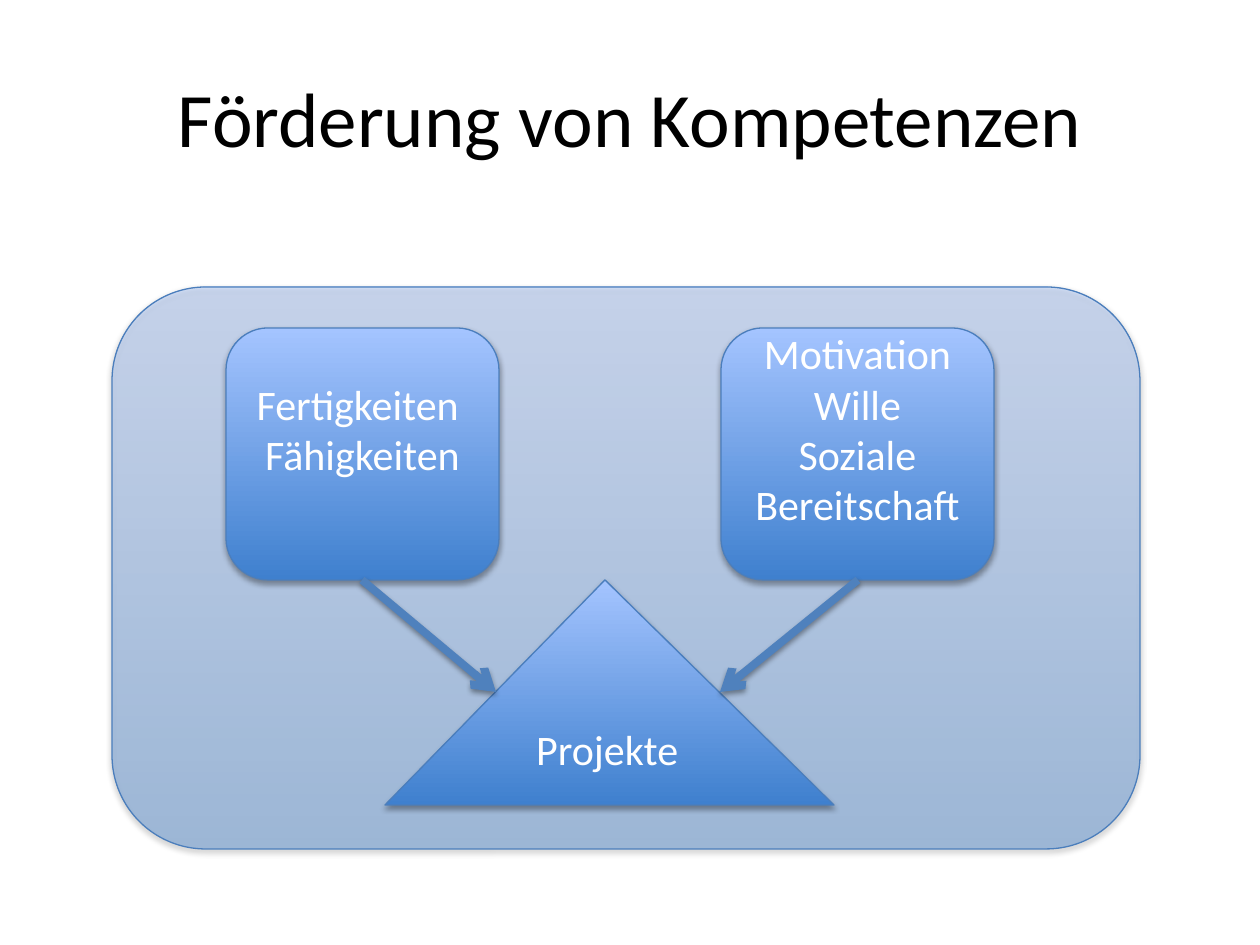
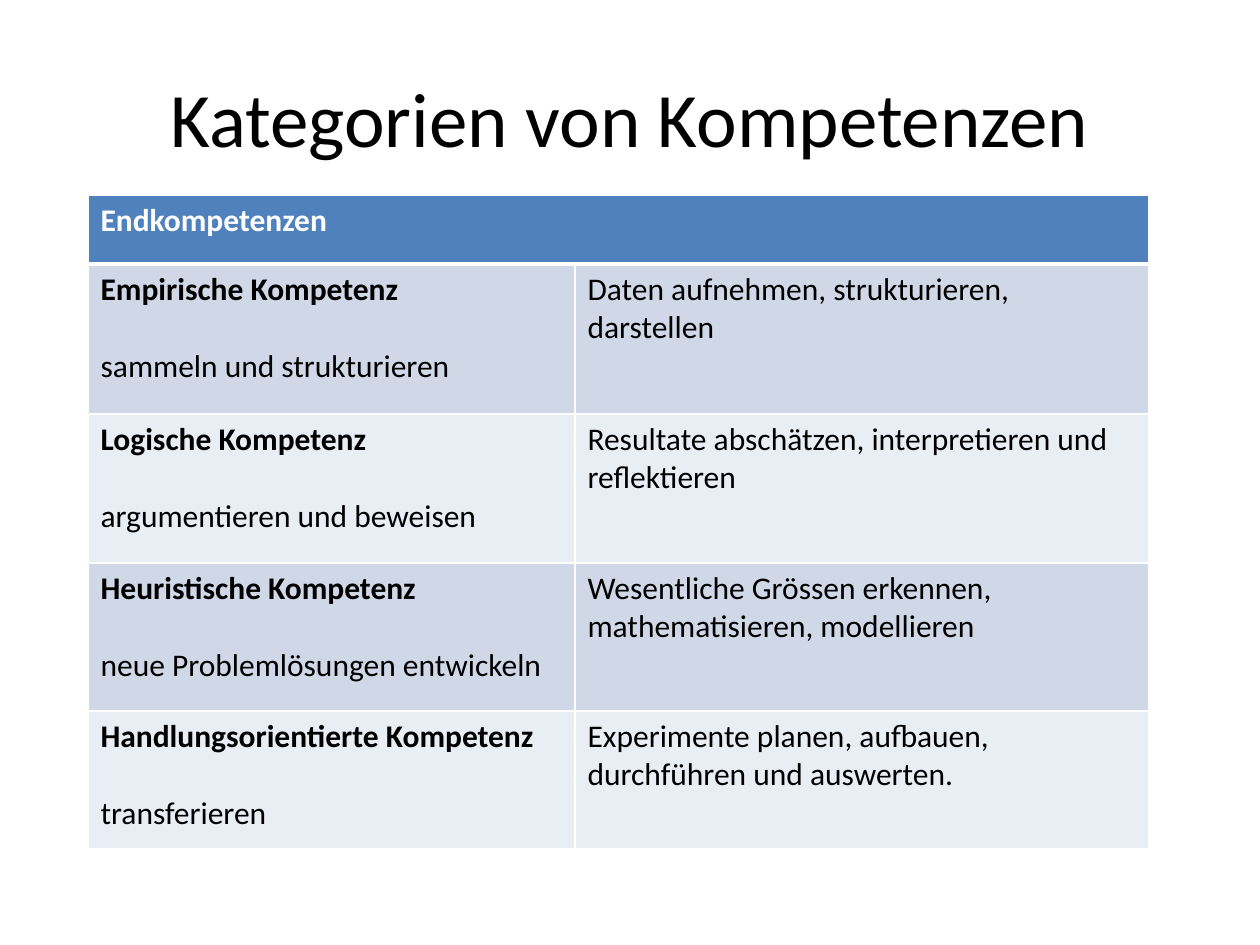
import pptx
import pptx.util
import pptx.dml.color
import pptx.enum.shapes
import pptx.enum.text
import pptx.oxml.ns
from lxml import etree

PX = 914400 // 126  # EMU in one px
FONT = "Calibri"
BLACK, WHITE = "000000", "FFFFFF"
ACCENT, OUTLINE = "4F81BD", "4B7EBC"
GRADIENT = ["3F80CE", "A4C4FF"]  # bottom, top
BANDS = ["D0D8E8", "E9EDF4"]

Pt = pptx.util.Pt
qn = pptx.oxml.ns.qn
MSO_SHAPE = pptx.enum.shapes.MSO_SHAPE
CENTER = pptx.enum.text.PP_ALIGN.CENTER
MIDDLE = pptx.enum.text.MSO_ANCHOR.MIDDLE


def rgb(color):
    return pptx.dml.color.RGBColor.from_string(color)


def add_shadow(s, alpha, dist):
    effects = etree.SubElement(s._element.spPr, qn("a:effectLst"))
    shadow = etree.SubElement(effects, qn("a:outerShdw"), blurRad="40000",
                              dist=str(dist), dir="5400000", rotWithShape="0")
    color = etree.SubElement(shadow, qn("a:srgbClr"), val=BLACK)
    etree.SubElement(color, qn("a:alpha"), val=str(alpha * 1000))


prs = pptx.Presentation()
prs.slide_width = 1260 * PX
prs.slide_height = 945 * PX

# Slides with their titles
slides = []
for title in ["Förderung von Kompetenzen", "Kategorien von Kompetenzen"]:
    s = prs.slides.add_slide(prs.slide_layouts[6])
    slides.append(s)
    tf = s.shapes.add_textbox(63 * PX, 38 * PX, 1134 * PX, 157 * PX).text_frame
    tf.word_wrap = True
    tf.vertical_anchor = MIDDLE
    p = tf.paragraphs[0]
    p.text = title
    p.alignment = CENTER
    p.font.name = FONT
    p.font.size = Pt(44)
    p.font.color.rgb = rgb(BLACK)

# Slide 1: panel, two boxes and the triangle
# kind, left, top, width, height, opacity in %, space under the text, lines
ROUND, TRIANGLE = MSO_SHAPE.ROUNDED_RECTANGLE, MSO_SHAPE.ISOSCELES_TRIANGLE
figures = [
    (ROUND, 112, 287, 1028, 562, 40, 6, []),
    (ROUND, 226, 328, 273, 252, 100, 57, ["Fertigkeiten ", "Fähigkeiten"]),
    (ROUND, 721, 328, 273, 252, 100, 57,
     ["Motivation", "Wille", "Soziale Bereitschaft"]),
    (TRIANGLE, 385, 580, 449, 225, 100, 6, ["Projekte"]),
]
shapes = slides[0].shapes
for kind, left, top, width, height, opacity, below, lines in figures:
    sp = shapes.add_shape(kind, left * PX, top * PX, width * PX, height * PX)
    if kind == TRIANGLE:
        sp.adjustments[0] = 0.49
    sp.fill.gradient()
    sp.fill.gradient_angle = 90
    for stop, color in zip(sp.fill.gradient_stops, GRADIENT):
        stop.color.rgb = rgb(color)
    if opacity < 100:
        for color in sp._element.spPr.iter(qn("a:srgbClr")):
            etree.SubElement(color, qn("a:alpha"), val=str(opacity * 1000))
    sp.line.color.rgb = rgb(OUTLINE)
    sp.line.width = Pt(0.75)
    add_shadow(sp, 35, 23000)

    tf = sp.text_frame
    tf.vertical_anchor = MIDDLE
    tf.margin_bottom = below * PX
    for i, line in enumerate(lines):
        p = tf.add_paragraph() if i else tf.paragraphs[0]
        p.text = line
        p.alignment = CENTER
        p.font.name = FONT
        p.font.size = Pt(24)
        p.font.color.rgb = rgb(WHITE)

# Arrows from the boxes to the triangle
for start, end in [(858, 720), (362, 496)]:
    arrow = shapes.add_connector(pptx.enum.shapes.MSO_CONNECTOR.STRAIGHT,
                                 start * PX, 580 * PX, end * PX, 692 * PX)
    arrow.line.color.rgb = rgb(ACCENT)
    arrow.line.width = Pt(4.5)
    etree.SubElement(arrow.line._get_or_add_ln(), qn("a:tailEnd"), type="arrow")
    add_shadow(arrow, 38, 20000)

# Slide 2: table of competences
rows = [
    (["Endkompetenzen"], ""),
    (["Empirische Kompetenz", "sammeln und strukturieren"],
     "Daten aufnehmen, strukturieren, darstellen"),
    (["Logische Kompetenz", "argumentieren und beweisen"],
     "Resultate abschätzen, interpretieren und reflektieren"),
    (["Heuristische Kompetenz", "neue Problemlösungen entwickeln"],
     "Wesentliche Grössen erkennen, mathematisieren, modellieren"),
    (["Handlungsorientierte Kompetenz", "transferieren"],
     "Experimente planen, aufbauen, durchführen und auswerten."),
]
widths = [487, 574]
heights = [69, 150, 149, 148, 138]
table = slides[1].shapes.add_table(len(rows), len(widths), 88 * PX, 195 * PX,
                                   sum(widths) * PX, sum(heights) * PX).table
for column, width in zip(table.columns, widths):
    column.width = width * PX
for row, height in zip(table.rows, heights):
    row.height = height * PX
table.cell(0, 0).merge(table.cell(0, 1))

for r, (competence, description) in enumerate(rows):
    for c, lines in enumerate([competence, [description]]):
        cell = table.cell(r, c)
        # White borders, thicker under the header
        for side in "LRTB":
            thick = (r, side) in [(0, "B"), (1, "T")]
            ln = etree.SubElement(cell._tc.get_or_add_tcPr(), qn("a:ln" + side),
                                  w=str(Pt(3 if thick else 1)))
            fill = etree.SubElement(ln, qn("a:solidFill"))
            etree.SubElement(fill, qn("a:srgbClr"), val=WHITE)
        cell.fill.solid()
        cell.fill.fore_color.rgb = rgb(BANDS[(r - 1) % 2] if r else ACCENT)
        if cell.is_spanned:
            continue
        for i, line in enumerate(lines):
            p = cell.text_frame.add_paragraph() if i else cell.text_frame.paragraphs[0]
            p.text = line
            if i:
                p.space_before = Pt(22)
            p.font.name = FONT
            p.font.size = Pt(18)
            p.font.bold = c == 0 and i == 0
            p.font.color.rgb = rgb(BLACK if r else WHITE)

prs.save("out.pptx")
